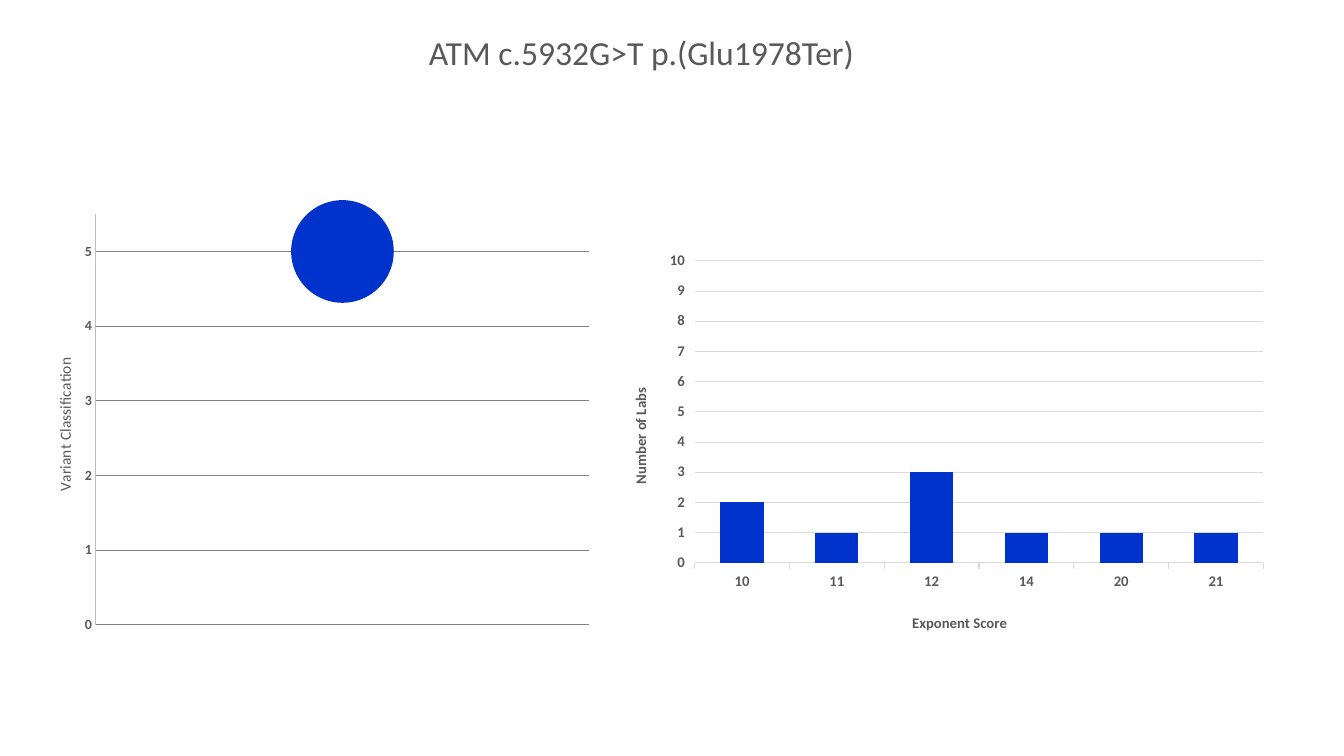
"""Build a variant slide with a classification bubble chart and a score column chart."""
from dataclasses import dataclass
from typing import Any, Optional

import pptx
import pptx.chart.data
import pptx.dml.color
import pptx.enum.chart
import pptx.enum.text
import pptx.oxml
import pptx.oxml.ns
import pptx.util

COLORS = {"text": "595959", "data": "0033CC", "axis": "BFBFBF",
          "dark_grid": "808080", "light_grid": "D9D9D9"}
FONT = "Calibri"
WIDTH, HEIGHT = pptx.util.Inches(13.33), pptx.util.Inches(7.5)
XL = pptx.enum.chart


@dataclass
class Box:
    """Hold a place as percentages of the slide or chart."""
    x: float
    y: float
    w: float
    h: float

    def emu(self) -> tuple[int, int, int, int]:
        return (int(self.x * WIDTH / 100), int(self.y * HEIGHT / 100),
                int(self.w * WIDTH / 100), int(self.h * HEIGHT / 100))


@dataclass
class AxisTitle:
    text: str
    x: float
    y: float
    size: float
    bold: bool
    rotated: bool = False


@dataclass
class AxisStyle:
    size: float
    tick: Any
    line: Optional[str] = None
    grid: Optional[str] = None
    title: Optional[AxisTitle] = None
    minimum: Optional[float] = None
    maximum: Optional[float] = None
    unit: Optional[float] = None
    visible: bool = True


@dataclass
class ChartSpec:
    kind: Any
    data: Any
    box: Box
    plot: Box
    horizontal: AxisStyle
    vertical: AxisStyle


def rgb(name: str) -> Any:
    return pptx.dml.color.RGBColor.from_string(COLORS[name])


def style_font(font: Any, size: float, bold: bool = False) -> None:
    font.name, font.size, font.bold = FONT, pptx.util.Pt(size), bold
    font.color.rgb = rgb("text")


def style_line(line: Any, color: Optional[str]) -> None:
    if color is None:
        line.fill.background()
        return
    line.color.rgb = rgb(color)
    line.width = pptx.util.Pt(0.75)


def set_layout(parent: Any, index: int, inner: bool = False, **percents: float) -> None:
    """Place a chart part by percentages of the chart's size."""
    for old in parent.findall(pptx.oxml.ns.qn("c:layout")):
        parent.remove(old)
    target = '<c:layoutTarget val="inner"/>' if inner else ""
    modes = "".join(f'<c:{k}Mode val="edge"/>' for k in "xy")
    values = "".join(f'<c:{k} val="{v / 100}"/>' for k, v in percents.items())
    parent.insert(index, pptx.oxml.parse_xml(
        f'<c:layout {pptx.oxml.ns.nsdecls("c")}><c:manualLayout>'
        f'{target}{modes}{values}</c:manualLayout></c:layout>'))


def add_axis_title(axis: Any, title: AxisTitle) -> None:
    axis.has_title = True
    tf = axis.axis_title.text_frame
    tf.text = title.text
    style_font(tf.paragraphs[0].font, title.size, title.bold)
    if title.rotated:
        body = tf._txBody.find(pptx.oxml.ns.qn("a:bodyPr"))
        body.set("rot", "-5400000")
        body.set("vert", "horz")
    set_layout(axis.axis_title._element, 1, x=title.x, y=title.y)


def style_axis(axis: Any, style: AxisStyle) -> None:
    axis.visible = style.visible
    axis.has_major_gridlines = style.grid is not None
    if style.grid:
        style_line(axis.major_gridlines.format.line, style.grid)
    if style.minimum is not None:
        axis.minimum_scale = style.minimum
    if style.maximum is not None:
        axis.maximum_scale = style.maximum
    if style.unit is not None:
        axis.major_unit = style.unit
    axis.major_tick_mark = style.tick
    axis.minor_tick_mark = XL.XL_TICK_MARK.NONE
    style_font(axis.tick_labels.font, style.size, True)
    style_line(axis.format.line, style.line)
    if style.title:
        add_axis_title(axis, style.title)


def add_chart(s: Any, spec: ChartSpec) -> Any:
    chart = s.shapes.add_chart(spec.kind, *spec.box.emu(), spec.data).chart
    chart.has_title = chart.has_legend = False
    chart.font.name, chart.font.size = FONT, pptx.util.Pt(10)
    style_axis(chart.category_axis, spec.horizontal)
    style_axis(chart.value_axis, spec.vertical)
    fill = chart.plots[0].series[0].format.fill
    fill.solid()
    fill.fore_color.rgb = rgb("data")
    area = spec.plot
    set_layout(chart._chartSpace.chart.plotArea, 0, inner=True,
               x=area.x, y=area.y, w=area.w, h=area.h)
    return chart


def main() -> None:
    prs = pptx.Presentation()
    prs.slide_width, prs.slide_height = WIDTH, HEIGHT
    s = prs.slides.add_slide(prs.slide_layouts[5])

    sp = s.shapes.title
    sp.left, sp.top, sp.width, sp.height = Box(28.3, 3.6, 38.3, 6.7).emu()
    tf = sp.text_frame
    tf.text = " ATM c.5932G>T p.(Glu1978Ter)"
    tf.vertical_anchor = pptx.enum.text.MSO_ANCHOR.MIDDLE
    p = tf.paragraphs[0]
    p.alignment = pptx.enum.text.PP_ALIGN.CENTER
    style_font(p.font, 24)

    classes = pptx.chart.data.BubbleChartData(number_format="General")
    series = classes.add_series("Series 1")
    for level, labs in enumerate((0, 0, 0, 0, 9), start=1):
        series.add_data_point(1, level, labs)

    scores = pptx.chart.data.CategoryChartData(number_format="General")
    scores.categories = ["10", "11", "12", "14", "20", "21"]
    scores.add_series("Series 1", (2, 1, 3, 1, 1, 1))

    tick = XL.XL_TICK_MARK
    add_chart(s, ChartSpec(
        XL.XL_CHART_TYPE.BUBBLE, classes,
        Box(2, 26.4, 42.7, 58.5), Box(12, 3.3, 86, 92.9),
        AxisStyle(10, tick.NONE, minimum=0.5, maximum=1.5, unit=0.5, visible=False),
        AxisStyle(10, tick.NONE, "axis", "dark_grid",
                  AxisTitle("Variant Classification", 4.3, 35.1, 11, False, True),
                  0, 5.5, 1)))
    columns = add_chart(s, ChartSpec(
        XL.XL_CHART_TYPE.COLUMN_CLUSTERED, scores,
        Box(45.5, 32.3, 49.5, 52.7), Box(12.5, 4.2, 85.5, 75.8),
        AxisStyle(10.5, tick.OUTSIDE, "light_grid",
                  title=AxisTitle("Exponent Score", 44.8, 92, 10.5, True)),
        AxisStyle(10.5, tick.OUTSIDE, None, "light_grid",
                  AxisTitle("Number of Labs", 2.5, 35.4, 10.5, True, True),
                  0, 10, 1)))
    plot = columns.plots[0]
    plot.vary_by_categories = False
    plot.gap_width, plot.overlap = 119, -27

    prs.save("out.pptx")


if __name__ == "__main__":
    main()
